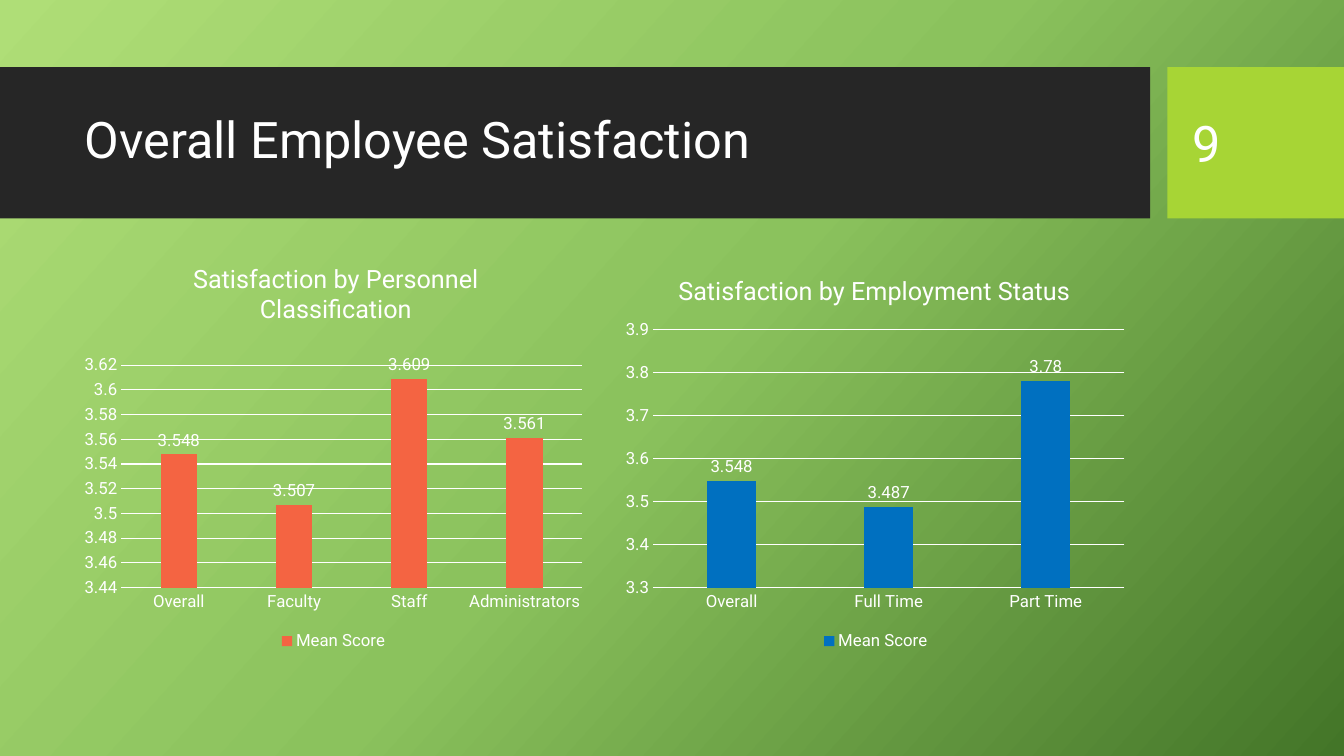
from copy import deepcopy
from dataclasses import dataclass

from lxml import etree
from pptx import Presentation
from pptx.chart.data import CategoryChartData
from pptx.dml.color import RGBColor
from pptx.enum.chart import (XL_CHART_TYPE, XL_LABEL_POSITION,
                             XL_LEGEND_POSITION, XL_TICK_MARK)
from pptx.enum.shapes import MSO_SHAPE
from pptx.enum.text import MSO_ANCHOR, MSO_AUTO_SIZE, PP_ALIGN
from pptx.oxml.ns import qn
from pptx.util import Pt

RECTANGLE = MSO_SHAPE.RECTANGLE
COLUMNS = XL_CHART_TYPE.COLUMN_CLUSTERED
OUTSIDE_END = XL_LABEL_POSITION.OUTSIDE_END
BOTTOM = XL_LEGEND_POSITION.BOTTOM
NO_TICK = XL_TICK_MARK.NONE
MIDDLE = MSO_ANCHOR.MIDDLE
NO_FIT = MSO_AUTO_SIZE.NONE
LEFT = PP_ALIGN.LEFT


@dataclass(frozen=True)
class Theme:
    font: str = "Roboto"
    text: str = "FFFFFF"
    band: str = "262626"
    accent: str = "A7D535"
    coral: str = "F46442"
    blue: str = "0070C0"
    background: tuple = ((0, "AFDE77"), (0.5, "8BC25D"), (1, "437528"))
    heading_size: float = 36
    chart_title_size: float = 18
    label_size: float = 12
    line_width: float = 0.75


THEME = Theme()


def color(value):
    return RGBColor.from_string(value)


def style_font(font, size):
    font.name = THEME.font
    font.size = Pt(size)
    font.bold = False
    font.color.rgb = color(THEME.text)


def style_line(line):
    line.color.rgb = color(THEME.text)
    line.width = Pt(THEME.line_width)


def place(shape, left, top, width, height):
    shape.left, shape.top = Pt(left), Pt(top)
    shape.width, shape.height = Pt(width), Pt(height)


def write_text(frame, text, size=THEME.heading_size, spacing=None):
    frame.word_wrap = True
    frame.auto_size = NO_FIT
    frame.vertical_anchor = MIDDLE
    para = frame.paragraphs[0]
    para.alignment = LEFT
    para.line_spacing = spacing
    span = para.add_run()
    span.text = text
    style_font(span.font, size)


def paint_background(page):
    fill = page.background.fill
    fill.gradient()
    fill.gradient_angle = 360 - 42  # counted counter-clockwise
    stop_list = page.element.find(".//" + qn("a:gsLst"))
    stop_list.insert(1, deepcopy(stop_list[0]))
    for stop, (position, value) in zip(fill.gradient_stops, THEME.background):
        stop.position = position
        stop.color.rgb = color(value)


def add_band(page, left, width, fill):
    band = page.shapes.add_shape(RECTANGLE, Pt(left), Pt(48), Pt(width), Pt(108))
    band.shadow.inherit = False
    band.fill.solid()
    band.fill.fore_color.rgb = color(fill)
    band.line.fill.background()


def set_layout(element, index, inner=False, **fractions):
    """Give a chart part a fixed place, in fractions of the chart."""
    old = element.find(qn("c:layout"))
    if old is not None:
        element.remove(old)
    layout = etree.Element(qn("c:layout"))
    manual = etree.SubElement(layout, qn("c:manualLayout"))
    if inner:
        etree.SubElement(manual, qn("c:layoutTarget")).set("val", "inner")
    for name in ("x", "y"):
        etree.SubElement(manual, qn(f"c:{name}Mode")).set("val", "edge")
    for name, value in fractions.items():
        etree.SubElement(manual, qn(f"c:{name}")).set("val", str(value))
    element.insert(index, layout)


def style_axes(chart, low, high, step):
    for axis in (chart.category_axis, chart.value_axis):
        axis.major_tick_mark = axis.minor_tick_mark = NO_TICK
        style_font(axis.tick_labels.font, THEME.label_size)
    style_line(chart.category_axis.format.line)
    values = chart.value_axis
    values.minimum_scale, values.maximum_scale = low, high
    values.major_unit = step
    values.tick_labels.number_format = "General"
    values.tick_labels.number_format_is_linked = False
    values.format.line.fill.background()
    values.has_major_gridlines = True
    style_line(values.major_gridlines.format.line)


def add_score_chart(page, left, title, scores, fill, scale, plot, title_at,
                    wrap_title):
    data = CategoryChartData()
    data.categories = list(scores)
    data.add_series("Mean Score", list(scores.values()))
    chart = page.shapes.add_chart(COLUMNS, Pt(left), Pt(184.3),
                                  Pt(370), Pt(283.7), data).chart
    style_font(chart.font, THEME.label_size)

    # Title
    chart.has_title = True
    frame = chart.chart_title.text_frame
    frame.word_wrap = wrap_title
    span = frame.paragraphs[0].add_run()
    span.text = title
    style_font(span.font, THEME.chart_title_size)
    chart.chart_title.include_in_layout = False
    set_layout(chart.element.find(".//" + qn("c:title")), 1, **title_at)

    # Columns and their values
    columns = chart.plots[0]
    columns.gap_width, columns.overlap = 219, -27
    columns.vary_by_categories = False
    series = columns.series[0]
    series.format.fill.solid()
    series.format.fill.fore_color.rgb = color(fill)
    labels = series.data_labels
    labels.show_value = True
    labels.position = OUTSIDE_END
    style_font(labels.font, THEME.label_size)

    # Axes, legend and plot area
    style_axes(chart, *scale)
    chart.has_legend = True
    chart.legend.position = BOTTOM
    chart.legend.include_in_layout = False
    style_font(chart.legend.font, THEME.label_size)
    set_layout(chart.element.find(".//" + qn("c:plotArea")), 0, inner=True, **plot)


def main():
    deck = Presentation()
    deck.slide_width, deck.slide_height = Pt(960), Pt(540)
    page = deck.slides.add_slide(deck.slide_layouts[5])
    paint_background(page)

    # Heading bands, with the title in front of them
    add_band(page, 0, 821.5, THEME.band)
    add_band(page, 833.8, 126.2, THEME.accent)
    title = page.shapes.title
    title.element.getparent().append(title.element)
    place(title, 53.3, 59, 756.7, 85)
    write_text(title.text_frame, "Overall Employee Satisfaction", spacing=0.9)

    # Charts
    add_score_chart(
        page, 53.3, "Satisfaction by Personnel Classification",
        {"Overall": 3.548, "Faculty": 3.507, "Staff": 3.609,
         "Administrators": 3.561},
        THEME.coral, (3.44, 3.62, 0.02),
        {"x": 0.09, "y": 0.27, "w": 0.89, "h": 0.56},
        title_at={"x": 0.22, "y": 0}, wrap_title=True)
    add_score_chart(
        page, 440.6, "Satisfaction by Employment Status",
        {"Overall": 3.548, "Full Time": 3.487, "Part Time": 3.78},
        THEME.blue, (3.3, 3.9, 0.1),
        {"x": 0.07, "y": 0.18, "w": 0.91, "h": 0.65},
        title_at={"x": 0.11, "y": 0.03}, wrap_title=False)

    # Page number
    box = page.shapes.add_textbox(Pt(844.6), Pt(59), Pt(90.7), Pt(85.7))
    write_text(box.text_frame, "9")

    deck.save("out.pptx")


if __name__ == "__main__":
    main()
